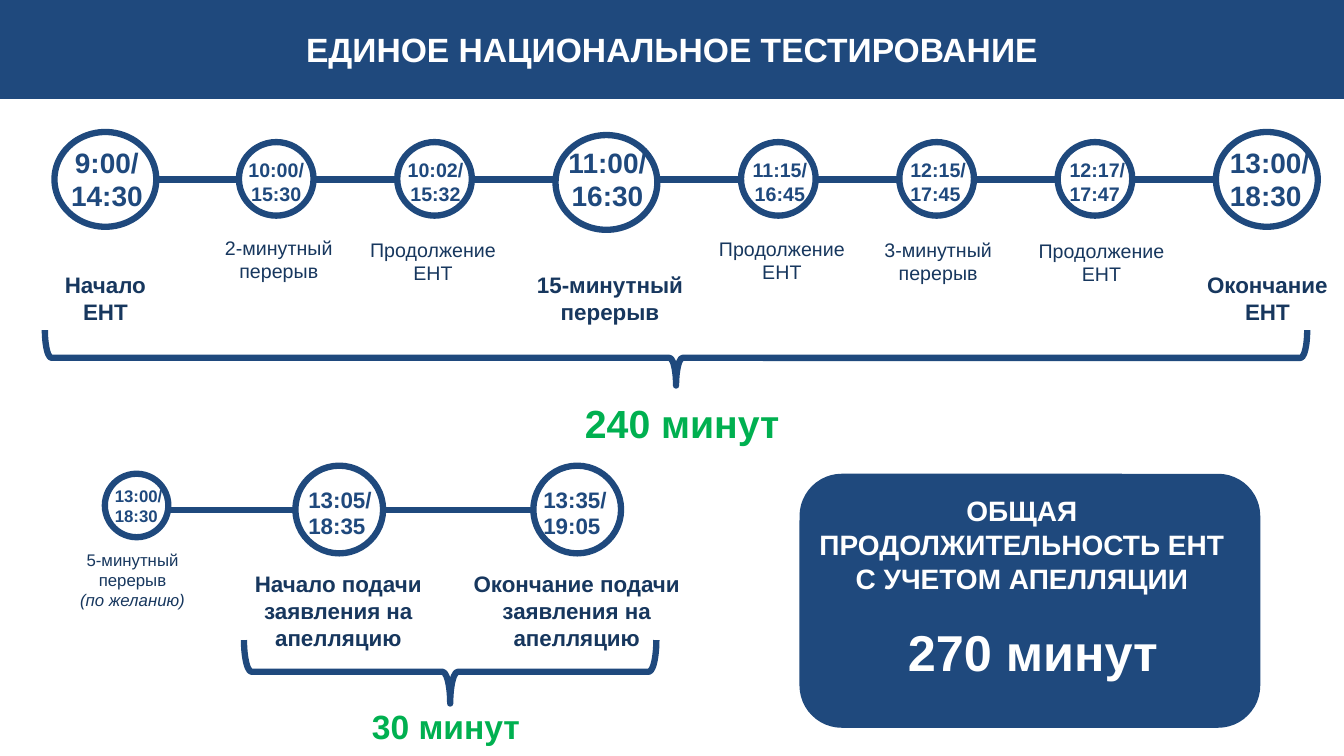
"""Build the testing day timeline slide on a grid of 75 rows of square cells."""
from lxml.etree import SubElement
from pptx import Presentation
from pptx.dml.color import RGBColor
from pptx.enum.shapes import MSO_CONNECTOR, MSO_SHAPE
from pptx.enum.text import MSO_ANCHOR, MSO_AUTO_SIZE, PP_ALIGN
from pptx.oxml.ns import qn
from pptx.util import Inches, Pt

COLORS = {"blue": "1F497D", "navy": "17375E", "green": "00B050", "white": "FFFFFF"}
CENTER, LEFT = PP_ALIGN.CENTER, PP_ALIGN.LEFT

presentation = Presentation()
presentation.slide_width = Inches(13.33)
presentation.slide_height = Inches(7.5)
slide = presentation.slides.add_slide(presentation.slide_layouts[6])
cell = presentation.slide_height / 75
columns = presentation.slide_width / cell


def draw(kind, box, fill=None, line_width=None):
    shape = slide.shapes.add_shape(kind, *[round(value * cell) for value in box])
    shape.shadow.inherit = False
    if fill:
        shape.fill.solid()
        shape.fill.fore_color.rgb = RGBColor.from_string(COLORS[fill])
    else:
        shape.fill.background()
    if line_width:
        shape.line.color.rgb = RGBColor.from_string(COLORS["blue"])
        shape.line.width = Pt(line_width)
    else:
        shape.line.fill.background()
    return shape


def write(text, box, size, color, bold=True, wrap=True, align=CENTER, shape=None):
    if shape is None:
        shape = slide.shapes.add_textbox(*[round(value * cell) for value in box])
        shape.text_frame.auto_size = MSO_AUTO_SIZE.SHAPE_TO_FIT_TEXT
    frame = shape.text_frame
    frame.word_wrap = wrap
    frame.text = text
    font_format = {"name": "Arial", "size": Pt(size), "bold": bold}
    for paragraph in frame.paragraphs:
        paragraph.alignment = align
        font = paragraph.runs[0].font
        for name, value in font_format.items():
            setattr(font, name, value)
        font.color.rgb = RGBColor.from_string(COLORS[color])
    return frame


header = draw(MSO_SHAPE.RECTANGLE, (0, 0, columns, 9.7), "blue", 2)
header_frame = write("ЕДИНОЕ НАЦИОНАЛЬНОЕ ТЕСТИРОВАНИЕ", None, 24, "white", shape=header)
header_frame.vertical_anchor = MSO_ANCHOR.MIDDLE

for start, end, row in [(10.7, 130.4, 17.8), (16.2, 54.1, 50.6)]:
    ends = [round(value * cell) for value in (start, row, end, row)]
    timeline = slide.shapes.add_connector(MSO_CONNECTOR.STRAIGHT, *ends)
    timeline.line.color.rgb = RGBColor.from_string(COLORS["blue"])
    timeline.line.width = Pt(4.5)
    SubElement(timeline.line._get_or_add_ln().getparent(), qn("a:effectLst"))

major = {"width": 10.1, "height": 9.4, "time_top": 13.9, "time_size": 20,
         "time_height": 7.7, "label_size": 16, "label_height": 6.4, "bold": True}
minor = {"width": 7.4, "height": 7.3, "time_top": 15.2, "time_size": 14,
         "time_height": 5.7, "label_size": 14, "label_height": 5.7, "bold": False}
appeal = {"width": 8.7, "height": 8.7, "time_top": 47.7, "time_size": 16,
          "time_height": 6.4, "label_size": 16, "label_height": 9.1, "bold": True}
pause = {"width": 6.3, "height": 6.3, "time_top": 47.7, "time_size": 12,
         "time_height": 5, "label_size": 12, "label_height": 7.1, "bold": False}

stops = [
    (major, 10.45, 13.1, "9:00/\n14:30", 6, 9.2, CENTER, "Начало ЕНТ", 3.7, 26.4, 13.5),
    (minor, 27.4, 14.1, "10:00/\n15:30", 23.3, 8.2, CENTER, "2-минутный перерыв", 19.4, 22.9, 16.5),
    (minor, 43.1, 14.1, "10:02/\n15:32", 39.4, 7.6, CENTER, "Продолжение ЕНТ", 34.4, 23.1, 17.1),
    (major, 60.15, 13.4, "11:00/\n16:30", 54.8, 10.9, CENTER, "15-минутный перерыв", 49.6, 26.4, 21.8),
    (minor, 77.2, 14.1, "11:15/\n16:45", 73, 8.7, CENTER, "Продолжение ЕНТ", 69, 23, 17.1),
    (minor, 92.9, 14.1, "12:15/\n17:45", 89.3, 7.6, LEFT, "3-минутный перерыв", 84.8, 23.1, 16.5),
    (minor, 108.6, 14.1, "12:17/\n17:47", 105.1, 7.6, LEFT, "Продолжение ЕНТ", 100.7, 23.2, 17.1),
    (major, 125.65, 13.1, "13:00/\n18:30", 121, 10, LEFT, "Окончание ЕНТ", 118.6, 26.4, 14.2),
    (pause, 13.55, 47, "13:00/\n18:30", 10.4, 6.8, LEFT, "5-минутный перерыв\n(по желанию)", 6.8, 54, 12.7),
    (appeal, 33.65, 46.2, "13:05/\n18:35", 29.6, 8.4, LEFT, "Начало подачи заявления на апелляцию", 23.3, 56.1, 20.5),
    (appeal, 57.25, 46.2, "13:35/\n19:05", 52.9, 8.4, LEFT, "Окончание подачи заявления на апелляцию", 45.4, 56.1, 23.6),
]
for (style, center, top, times, time_left, time_width, align,
     label, label_left, label_top, label_width) in stops:
    circle_box = (center - style["width"] / 2, top, style["width"], style["height"])
    draw(MSO_SHAPE.OVAL, circle_box, "white", 4.5)
    time_box = (time_left, style["time_top"], time_width, style["time_height"])
    write(times, time_box, style["time_size"], "blue", wrap=False, align=align)
    label_box = (label_left, label_top, label_width, style["label_height"])
    label_frame = write(label, label_box, style["label_size"], "navy", style["bold"])
    for note in label_frame.paragraphs[1:]:
        note.runs[0].font.italic = True

for brace_box in [(64.3, -27.1, 5.5, 125.2), (41.5, 46.2, 6.3, 40.9)]:
    brace = draw(MSO_SHAPE.RIGHT_BRACE, brace_box, line_width=4.5)
    brace.rotation = 90
    brace.adjustments[0] = 0.12

write("240 минут", (56.9, 39.1, 21.5, 5.7), 28, "green", wrap=False)
write("30 минут", (35.9, 69.5, 16.9, 5), 24, "green", wrap=False, align=LEFT)

draw(MSO_SHAPE.ROUNDED_RECTANGLE, (79.3, 47, 45.7, 25.2), "blue")
write("ОБЩАЯ ПРОДОЛЖИТЕЛЬНОСТЬ ЕНТ С УЧЕТОМ АПЕЛЛЯЦИИ",
      (79.3, 48.5, 44.1, 11.1), 20, "white")
write("270 минут", (87.9, 61.1, 29.1, 7.1), 36, "white")

presentation.save("out.pptx")
